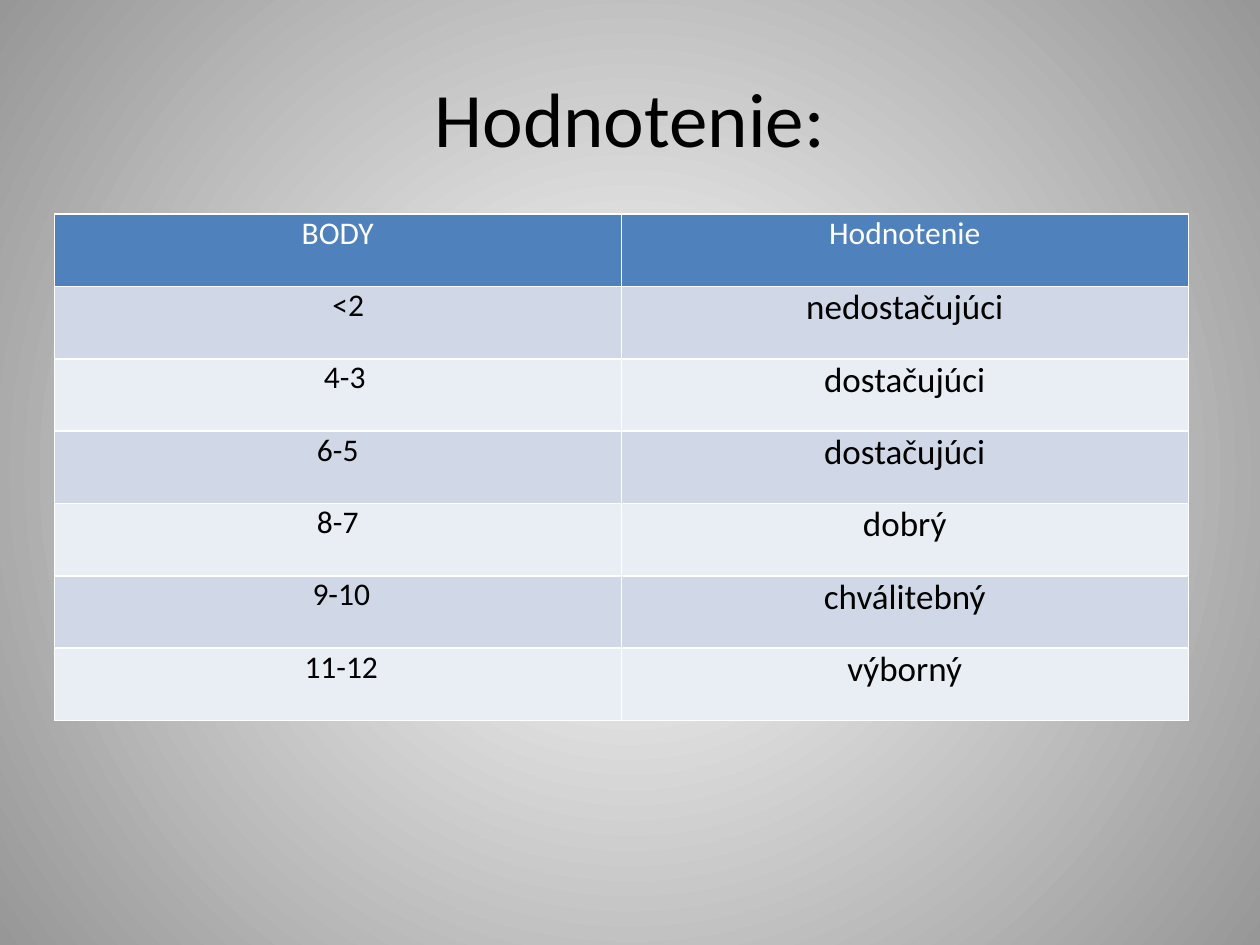
"""Build a grading slide with a title and a table of points and marks."""
from lxml import etree
from pptx import Presentation
from pptx.dml.color import RGBColor
from pptx.enum.text import MSO_ANCHOR, PP_ALIGN
from pptx.oxml.ns import qn
from pptx.util import Pt

MIDDLE, TOP = MSO_ANCHOR.MIDDLE, MSO_ANCHOR.TOP
CENTER = PP_ALIGN.CENTER
COLORS = {
    "black": "000000", "white": "FFFFFF", "gray": "979797",
    "head": "4F81BD", "odd": "D0D8E8", "even": "E9EDF4",
}
ROWS = [
    ("BODY", "Hodnotenie", 0),
    ("<2", "nedostačujúci", 12),
    ("4-3", "dostačujúci", 8),
    ("6-5", "dostačujúci", 0),
    ("8-7", "dobrý", 0),
    ("9-10", "chválitebný", 4),
    ("11-12", "výborný", 4),
]


def rgb(name):
    return RGBColor.from_string(COLORS[name])


def write(frame, text, size, color):
    para = frame.paragraphs[0]
    para.alignment = CENTER
    run = para.add_run()
    run.text = text
    style = {"name": "Calibri", "size": Pt(size), "bold": False}
    for key, value in style.items():
        setattr(run.font, key, value)
    run.font.color.rgb = rgb(color)


prs = Presentation()
prs.slide_width, prs.slide_height = Pt(720), Pt(540)
slide = prs.slides.add_slide(prs.slide_layouts[6])

fill = slide.background.fill
fill.gradient()
for stop, name in zip(fill.gradient_stops, ("white", "gray")):
    stop.color.rgb = rgb(name)
grad = next(slide.element.iter(qn("a:gradFill")))
grad.remove(grad.find(qn("a:lin")))
circle = etree.SubElement(grad, qn("a:path"), path="circle")
etree.SubElement(circle, qn("a:fillToRect"), l="50000", t="50000", r="50000", b="50000")

title = slide.shapes.add_textbox(Pt(36), Pt(21.6), Pt(648), Pt(90)).text_frame
title.word_wrap = True
title.vertical_anchor = MIDDLE
write(title, "Hodnotenie:", 44, "black")

table = slide.shapes.add_table(
    len(ROWS), 2, Pt(31), Pt(122.4), Pt(648), Pt(289.45)).table
for col in table.columns:
    col.width = Pt(324)
for i, (points, mark, shift) in enumerate(ROWS):
    table.rows[i].height = Pt(41.35)
    band = "head" if i == 0 else ("even", "odd")[i % 2]
    ink = "black" if i else "white"
    sizes = (18, 20) if i else (18, 18)
    for j, text in enumerate((points, mark)):
        cell = table.cell(i, j)
        form = {
            "margin_left": Pt(5 if j else 5 + shift), "margin_right": Pt(5),
            "margin_top": 0, "margin_bottom": 0, "vertical_anchor": TOP,
        }
        for key, value in form.items():
            setattr(cell, key, value)
        cell.fill.solid()
        cell.fill.fore_color.rgb = rgb(band)
        write(cell.text_frame, text, sizes[j], ink)

prs.save("out.pptx")
